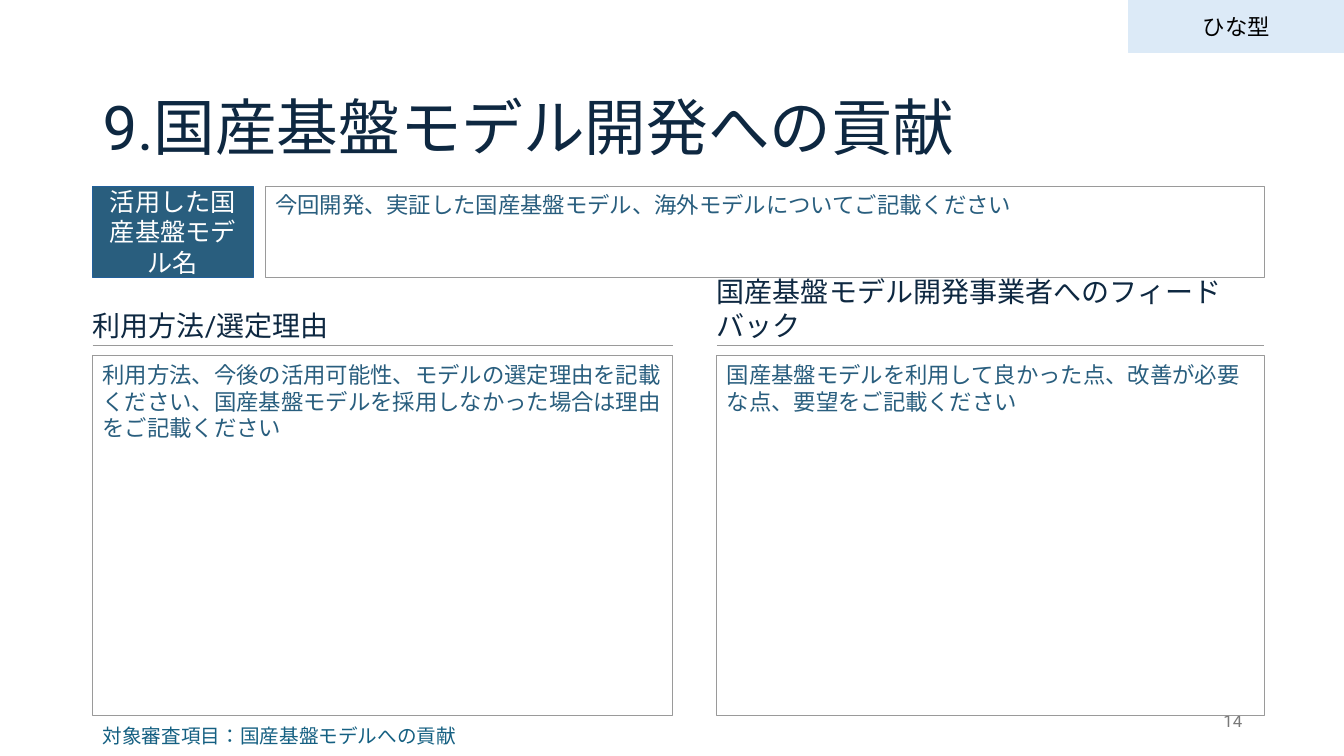
from dataclasses import dataclass

import pptx
import pptx.dml.color
import pptx.enum.shapes
import pptx.enum.text
import pptx.oxml
import pptx.oxml.ns
import pptx.util

RGBColor = pptx.dml.color.RGBColor
Align = pptx.enum.text.PP_ALIGN
Anchor = pptx.enum.text.MSO_ANCHOR

NAVY = RGBColor(0x0E, 0x28, 0x41)
STEEL = RGBColor(0x29, 0x5E, 0x7E)
BLUE = RGBColor(0x21, 0x5F, 0x9A)
TEAL = RGBColor(0x15, 0x60, 0x82)
PALE = RGBColor(0xDC, 0xEA, 0xF7)
GREY = RGBColor(0x9A, 0x9A, 0x9A)
DIM = RGBColor(0x79, 0x79, 0x79)
BLACK = RGBColor(0, 0, 0)
WHITE = RGBColor(0xFF, 0xFF, 0xFF)

FONT = "Roboto"
WIDTH = pptx.util.Inches(13.33)
HEIGHT = pptx.util.Inches(7.5)
COLS = ROWS = 100
LEFT, RIGHT = 6.9, 94.07
HEAD_TOP, RULE_ROW, BODY_TOP, BODY_END = 40.67, 45.73, 47.07, 94.67
MODEL_TOP, MODEL_ROWS = 24.67, 12


@dataclass(frozen=True)
class Area:
    col: float
    row: float
    cols: float
    rows: float

    def place(self) -> tuple[int, int, int, int]:
        return (across(self.col), down(self.row), across(self.cols), down(self.rows))


@dataclass(frozen=True)
class Panel:
    left: float
    right: float
    head_cols: float
    head: str
    hint: str


PANELS = [
    Panel(LEFT, 50.04, 39.16, "利用方法/選定理由",
          "利用方法、今後の活用可能性、モデルの選定理由を記載ください、"
          "国産基盤モデルを採用しなかった場合は理由をご記載ください"),
    Panel(53.34, RIGHT, 39.83, "国産基盤モデル開発事業者へのフィードバック",
          "国産基盤モデルを利用して良かった点、改善が必要な点、要望をご記載ください"),
]


def across(cols: float) -> int:
    return round(WIDTH * cols / COLS)


def down(rows: float) -> int:
    return round(HEIGHT * rows / ROWS)


def write(shape, text: str, *, size: float, color, align=Align.LEFT,
          anchor=Anchor.TOP, inset: float | None = None,
          lead: float | None = None, indent: float = 0) -> None:
    frame = shape.text_frame
    frame.word_wrap = True
    frame.vertical_anchor = anchor
    if inset is not None:
        frame.margin_left = frame.margin_right = pptx.util.Inches(inset)
        frame.margin_top = frame.margin_bottom = pptx.util.Inches(inset)
    para = frame.paragraphs[0]
    para.alignment = align
    if lead:
        para.line_spacing = lead
    if indent:
        para._p.get_or_add_pPr().set("marL", str(pptx.util.Inches(indent)))
    run = para.add_run()
    run.text = text
    run.font.size = pptx.util.Pt(size)
    run.font.name = FONT
    run.font.color.rgb = color
    props = run.font._element
    props.set("lang", "ja-JP")
    east = pptx.oxml.parse_xml(
        f'<a:ea {pptx.oxml.ns.nsdecls("a")} typeface="{FONT}"/>')
    props.find(pptx.oxml.ns.qn("a:latin")).addnext(east)


def label(slide, area: Area, text: str, **style) -> None:
    write(slide.shapes.add_textbox(*area.place()), text, **style)


def box(slide, area: Area, text: str, *, line=GREY, fill=None, **style) -> None:
    shape = slide.shapes.add_shape(
        pptx.enum.shapes.MSO_SHAPE.RECTANGLE, *area.place())
    shape.shadow.inherit = False
    if fill is None:
        shape.fill.background()
    else:
        shape.fill.solid()
        shape.fill.fore_color.rgb = fill
    shape.line.color.rgb = line
    shape.line.width = pptx.util.Pt(0.75)
    write(shape, text, **style)


def rule(slide, left: float, right: float, row: float) -> None:
    line = slide.shapes.add_connector(
        pptx.enum.shapes.MSO_CONNECTOR.STRAIGHT,
        across(left), down(row), across(right), down(row))
    line.line.color.rgb = GREY
    line.line.width = pptx.util.Pt(0.75)
    line._element.spPr.append(pptx.oxml.parse_xml(
        f'<a:effectLst {pptx.oxml.ns.nsdecls("a")}/>'))


def draw(slide, panel: Panel) -> None:
    label(slide, Area(panel.left, HEAD_TOP, panel.head_cols, 4.53), panel.head,
          size=20, color=NAVY, anchor=Anchor.BOTTOM, inset=0)
    rule(slide, panel.left, panel.right, RULE_ROW)
    box(slide, Area(panel.left, BODY_TOP, panel.right - panel.left,
                    BODY_END - BODY_TOP), panel.hint, size=16, color=STEEL)


def main() -> None:
    deck = pptx.Presentation()
    deck.slide_width, deck.slide_height = WIDTH, HEIGHT
    slide = deck.slides.add_slide(deck.slide_layouts[6])

    label(slide, Area(70.67, 92.67, 22.5, 5.33), "14", size=12, color=DIM,
          align=Align.RIGHT, anchor=Anchor.MIDDLE)
    box(slide, Area(84, 0, 16, 7), "ひな型", line=PALE, fill=PALE,
        size=16, color=BLACK, align=Align.CENTER, anchor=Anchor.MIDDLE)
    label(slide, Area(LEFT, 7.6, 86.27, 19.33), "9.国産基盤モデル開発への貢献",
          size=44, color=NAVY, anchor=Anchor.MIDDLE, lead=0.9)
    box(slide, Area(LEFT, MODEL_TOP, 11.93, MODEL_ROWS), "活用した国産基盤モデル名",
        line=BLUE, fill=STEEL, size=18, color=WHITE,
        align=Align.CENTER, anchor=Anchor.MIDDLE)
    box(slide, Area(19.73, MODEL_TOP, RIGHT - 19.73, MODEL_ROWS),
        "今回開発、実証した国産基盤モデル、海外モデルについてご記載ください",
        size=16, color=STEEL)
    for panel in PANELS:
        draw(slide, panel)
    label(slide, Area(6, 95.07, 37.73, 4.53), "対象審査項目：国産基盤モデルへの貢献",
          size=14, color=TEAL, anchor=Anchor.MIDDLE, indent=0.12)

    deck.save("out.pptx")


if __name__ == "__main__":
    main()
